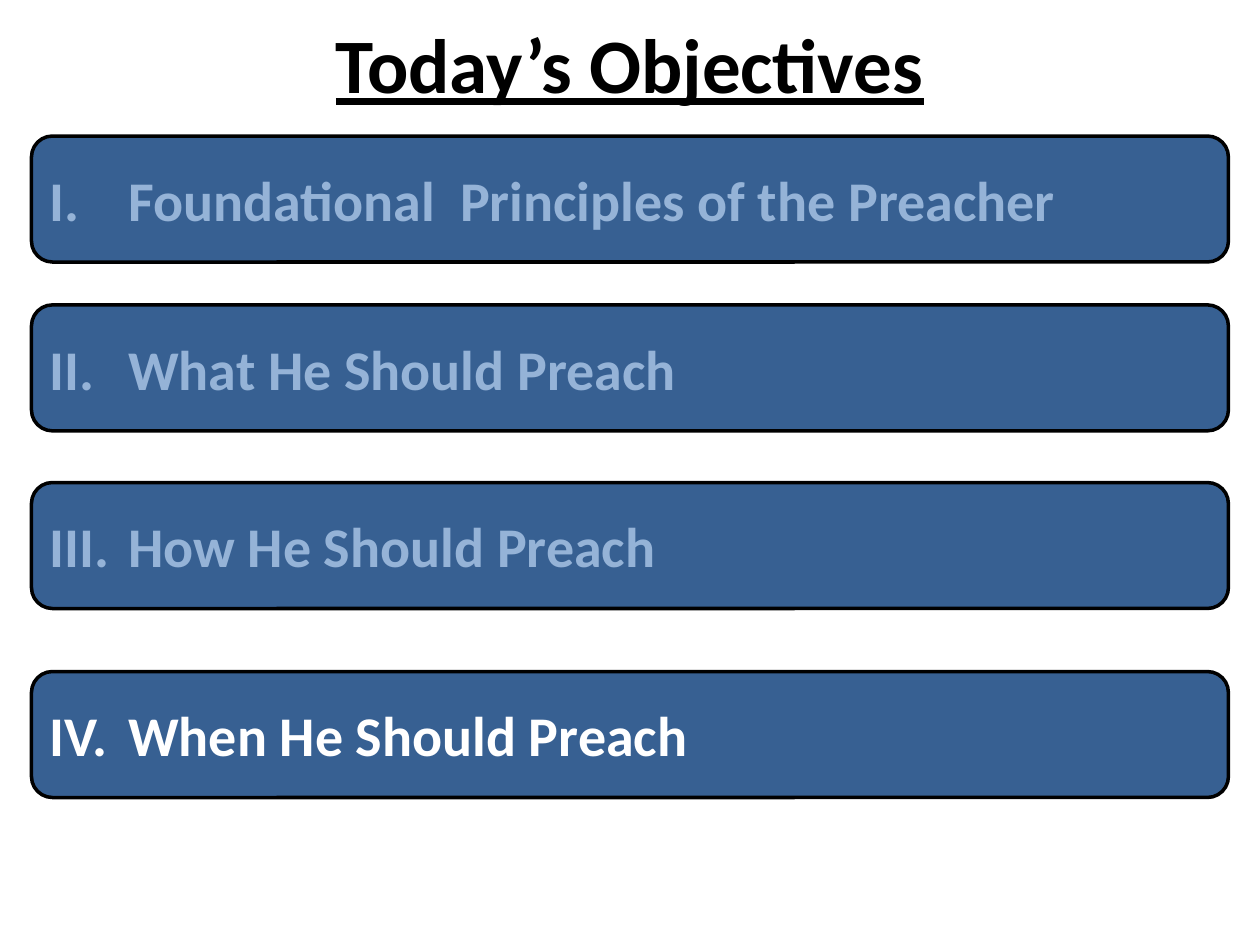
from lxml.etree import SubElement
from pptx import Presentation
from pptx.dml.color import RGBColor
from pptx.enum.shapes import MSO_SHAPE as Shape
from pptx.enum.text import MSO_ANCHOR as Anchor, PP_ALIGN as Align
from pptx.oxml.ns import qn
from pptx.util import Inches, Pt

BLACK, WHITE, BLUE, PALE_BLUE = "000000", "FFFFFF", "376092", "95B3D7"


def rgb(color):
    return RGBColor.from_string(color)


def style_text(para, size, color):
    for span in para.runs:
        span.font.name = "Calibri"
        span.font.size = Pt(size)
        span.font.bold = True
        span.font.color.rgb = rgb(color)


deck = Presentation()
deck.slide_width, deck.slide_height = Inches(10), Inches(7.5)
page = deck.slides.add_slide(deck.slide_layouts[5])

title = page.shapes.title
title.left, title.top = Inches(0.5), Inches(0)
title.width, title.height = Inches(9), Inches(1)
title.text_frame.text = "Today’s Objectives"
title.text_frame.vertical_anchor = Anchor.MIDDLE
heading = title.text_frame.paragraphs[0]
heading.alignment = Align.CENTER
style_text(heading, 44, BLACK)
heading.runs[0].font.underline = True

objectives = [
    (1.08, "Foundational  Principles of the Preacher", PALE_BLUE),
    (2.42, "What He Should Preach", PALE_BLUE),
    (3.83, "How He Should Preach", PALE_BLUE),
    (5.33, "When He Should Preach", WHITE),
]
for number, (top, wording, color) in enumerate(objectives, start=1):
    box = page.shapes.add_shape(
        Shape.ROUNDED_RECTANGLE, Inches(0.25), Inches(top), Inches(9.5), Inches(1)
    )
    box.shadow.inherit = False
    box.fill.solid()
    box.fill.fore_color.rgb = rgb(BLUE)
    box.line.color.rgb = rgb(BLACK)
    box.line.width = Pt(2)

    frame = box.text_frame
    frame.word_wrap = True
    frame.vertical_anchor = Anchor.MIDDLE
    frame.text = wording
    para = frame.paragraphs[0]
    para.alignment = Align.LEFT
    properties = para._p.get_or_add_pPr()
    properties.set("marL", str(Inches(0.62)))
    properties.set("indent", str(-Inches(0.62)))
    SubElement(properties, qn("a:buFont"), typeface="+mj-lt")
    SubElement(properties, qn("a:buAutoNum"), type="romanUcPeriod", startAt=str(number))
    style_text(para, 32, color)

deck.save("out.pptx")
